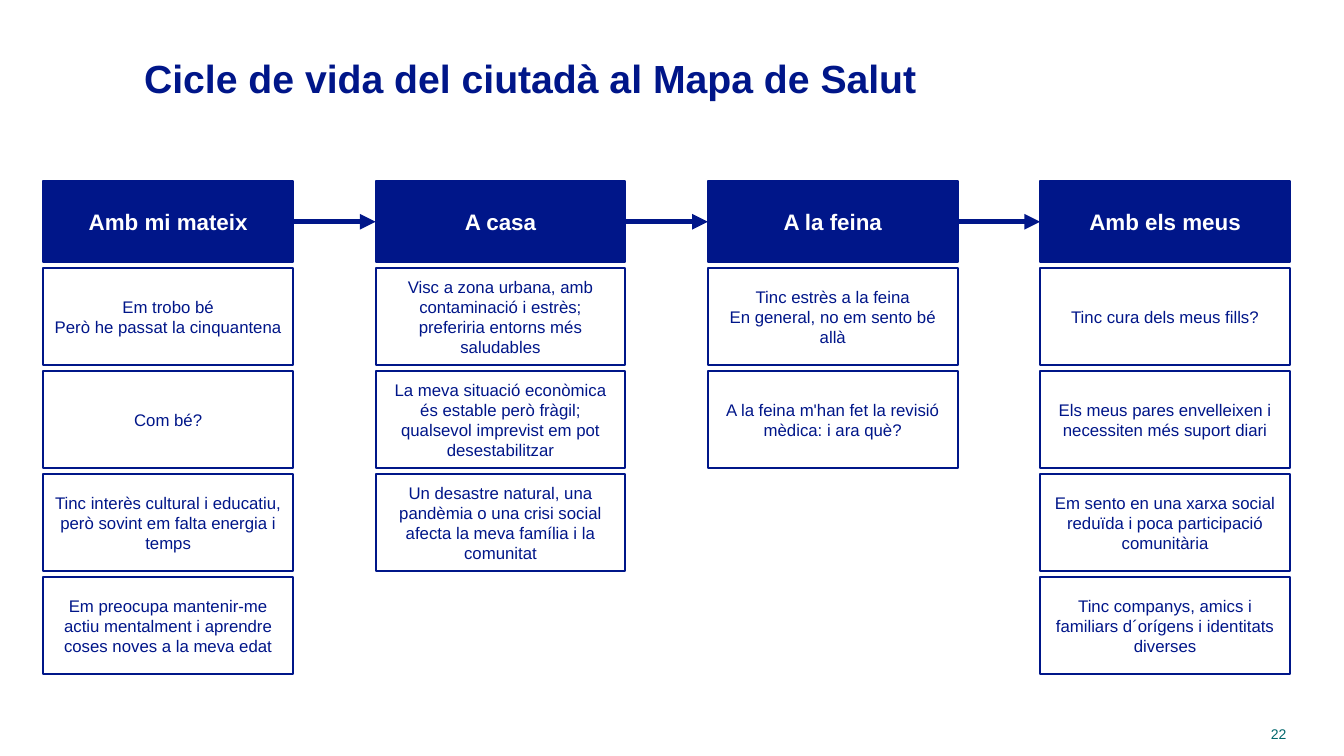
from lxml.etree import SubElement
from pptx import Presentation
from pptx.dml.color import RGBColor
from pptx.enum.shapes import MSO_CONNECTOR, MSO_SHAPE
from pptx.enum.text import MSO_ANCHOR, PP_ALIGN
from pptx.oxml.ns import qn
from pptx.util import Pt

NAVY, WHITE, TEAL = "001689", "FFFFFF", "00676C"
FONT = "Arial"
COL_W, COL_STEP = 178.4, 237.36
HEADER_H = 57.6
CARD_TOP, CARD_H, CARD_STEP = 61.92, 69.4, 73.6

STAGES = [
    ("Amb mi mateix", [
        ["Em trobo bé", "Però he passat la cinquantena"],
        ["Com bé?"],
        ["Tinc interès cultural i educatiu, però sovint em falta energia i temps"],
        ["Em preocupa mantenir-me actiu mentalment i aprendre coses noves a la meva edat"],
    ]),
    ("A casa", [
        ["Visc a zona urbana, amb contaminació i estrès; preferiria entorns més saludables"],
        ["La meva situació econòmica és estable però fràgil; "
         "qualsevol imprevist em pot desestabilitzar"],
        ["Un desastre natural, una pandèmia o una crisi social "
         "afecta la meva família i la comunitat"],
    ]),
    ("A la feina", [
        ["Tinc estrès a la feina", "En general, no em sento bé allà"],
        ["A la feina m'han fet la revisió mèdica: i ara què?"],
    ]),
    ("Amb els meus", [
        ["Tinc cura dels meus fills?"],
        ["Els meus pares envelleixen i necessiten més suport diari"],
        ["Em sento en una xarxa social reduïda i poca participació comunitària"],
        ["Tinc companys, amics i familiars d´orígens i identitats diverses"],
    ]),
]


def rgb(color):
    return RGBColor.from_string(color)


def add_text(tf, lines, size, color, bold=False, align=PP_ALIGN.CENTER):
    tf.word_wrap = True
    tf.vertical_anchor = MSO_ANCHOR.MIDDLE
    for i, line in enumerate(lines):
        p = tf.paragraphs[0] if i == 0 else tf.add_paragraph()
        p.alignment = align
        r = p.add_run()
        r.text = line
        r.font.name, r.font.size, r.font.bold = FONT, Pt(size), bold
        r.font.color.rgb = rgb(color)


def add_label(s, x, y, w, h, text, size, color, bold, align):
    tb = s.shapes.add_textbox(Pt(x), Pt(y), Pt(w), Pt(h))
    add_text(tb.text_frame, [text], size, color, bold, align)


def add_box(s, x, y, h, fill, alpha=None):
    sp = s.shapes.add_shape(MSO_SHAPE.RECTANGLE, Pt(x), Pt(y), Pt(COL_W), Pt(h))
    sp.shadow.inherit = False
    sp.fill.solid()
    sp.fill.fore_color.rgb = rgb(fill)
    sp.line.color.rgb = rgb(NAVY)
    sp.line.width = Pt(1.5)
    if alpha is not None:
        clr = sp.fill._xPr.find(qn("a:solidFill"))[0]
        SubElement(clr, qn("a:alpha")).set("val", str(alpha * 1000))
    return sp


def add_stage(s, x, y, heading, cards):
    # Heading
    header = add_box(s, x, y, HEADER_H, NAVY)
    add_text(header.text_frame, [heading], 16, WHITE, bold=True)
    # Cards below it
    for row, lines in enumerate(cards):
        card = add_box(s, x, y + CARD_TOP + row * CARD_STEP, CARD_H, WHITE, alpha=56)
        add_text(card.text_frame, lines, 12, NAVY)
    return header


def add_arrow(s, start, end):
    c = s.shapes.add_connector(MSO_CONNECTOR.STRAIGHT, 0, 0, 0, 0)
    c.begin_connect(start, 3)
    c.end_connect(end, 1)
    c.line.color.rgb = rgb(NAVY)
    c.line.width = Pt(3.75)
    SubElement(c.line._get_or_add_ln(), qn("a:tailEnd")).set("type", "triangle")
    SubElement(c._element.spPr, qn("a:effectLst"))


def add_life_cycle(s, x, y):
    headers = [add_stage(s, x + i * COL_STEP, y, heading, cards)
               for i, (heading, cards) in enumerate(STAGES)]
    for start, end in zip(headers, headers[1:]):
        add_arrow(s, start, end)


def main():
    prs = Presentation()
    prs.slide_width, prs.slide_height = Pt(960), Pt(540)
    s = prs.slides.add_slide(prs.slide_layouts[6])
    # Title
    add_label(s, 95.8, 33.1, 818, 44.6, "Cicle de vida del ciutadà al Mapa de Salut",
              28, NAVY, True, PP_ALIGN.LEFT)
    # Stages with their cards
    add_life_cycle(s, 30.96, 129.6)
    # Page number
    add_label(s, 865.4, 514, 60.5, 21, "22", 10, TEAL, False, PP_ALIGN.RIGHT)
    prs.save("out.pptx")


if __name__ == "__main__":
    main()
